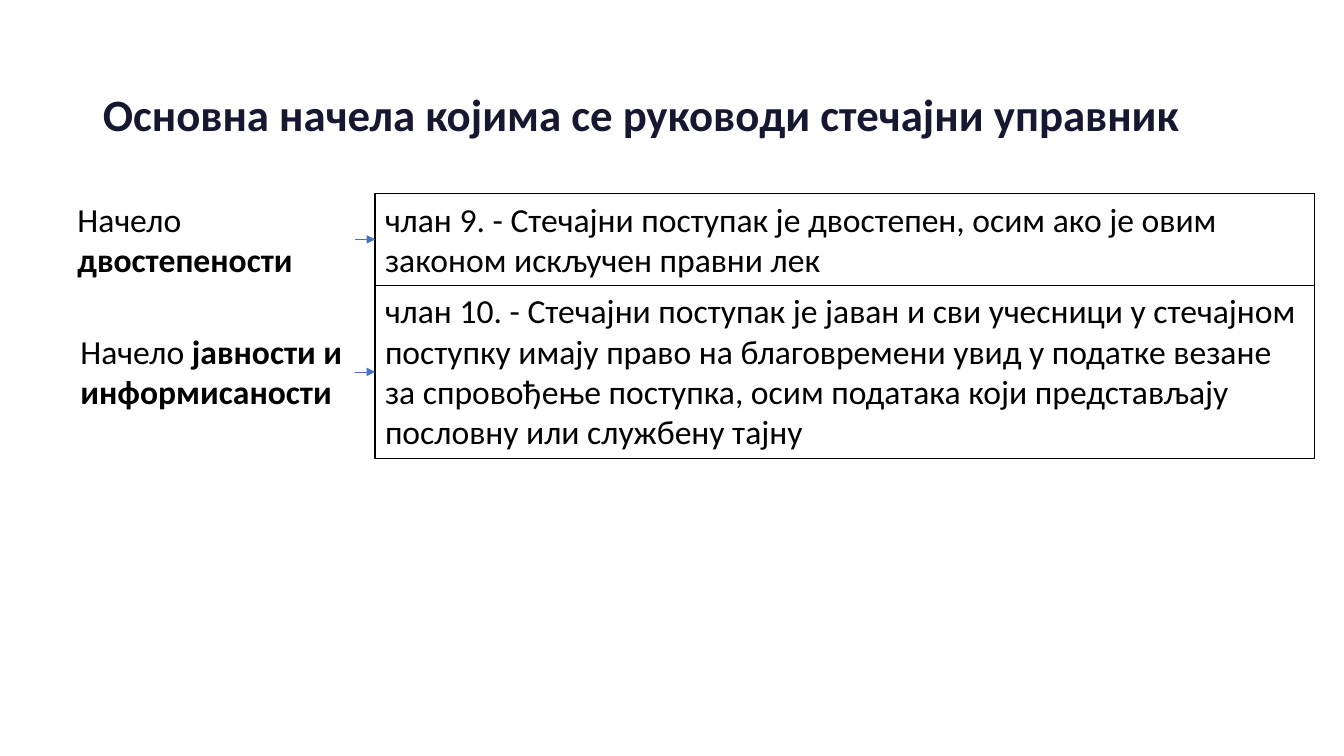
"""Builds a slide on the principles that guide a bankruptcy administrator."""
from dataclasses import dataclass

from lxml import etree
from pptx import Presentation
from pptx.dml.color import RGBColor
from pptx.enum.shapes import MSO_CONNECTOR, MSO_SHAPE
from pptx.enum.text import MSO_ANCHOR, MSO_AUTO_SIZE, PP_ALIGN
from pptx.oxml.ns import qn
from pptx.util import Inches, Pt

STRAIGHT = MSO_CONNECTOR.STRAIGHT
RECTANGLE = MSO_SHAPE.RECTANGLE
TOP, BOTTOM = MSO_ANCHOR.TOP, MSO_ANCHOR.BOTTOM
GROW = MSO_AUTO_SIZE.SHAPE_TO_FIT_TEXT
LEFT = PP_ALIGN.LEFT

FONT = "Calibri"
BLACK, NAVY, BLUE = "000000", "161730", "4472C4"
WIDTH, HEIGHT = Inches(13.33), Inches(7.5)
TITLE_ONLY = 5
LEFT_SIDE, RIGHT_SIDE = 1, 3

LABEL_RIGHT, LABEL_HEIGHT = 26.45, 12.13
BOX_LEFT, BOX_WIDTH = 27.91, 69.92
FIRST_TOP = 25.6


@dataclass
class Principle:
    """One principle: its label, its article and their shares of the slide in percent."""
    name: str
    article: str
    label_left: float
    box_height: float


PRINCIPLES = [
    Principle("двостепености",
              "члан 9. - Стечајни поступак је двостепен, осим ако је овим "
              "законом искључен правни лек", 5.03, 12.13),
    Principle("јавности и информисаности",
              "члан 10. - Стечајни поступак је јаван и сви учесници у стечајном "
              "поступку имају право на благовремени увид у податке везане за "
              "спровођење поступка, осим података који представљају пословну "
              "или службену тајну", 5.25, 22.93),
]


def color(value: str) -> RGBColor:
    """Turn a hex string into a colour."""
    return RGBColor.from_string(value)


def across(share: float) -> int:
    """Turn a percentage of the slide width into a length."""
    return round(WIDTH * share / 100)


def down(share: float) -> int:
    """Turn a percentage of the slide height into a length."""
    return round(HEIGHT * share / 100)


def area(x: float, y: float, w: float, h: float) -> tuple[int, int, int, int]:
    """Turn percentages into left, top, width and height."""
    return across(x), down(y), across(w), down(h)


def write(sp, runs: list[tuple[str, bool]], size: int = 24,
          ink: str = BLACK, anchor=TOP) -> None:
    """Fill a shape with one left-aligned paragraph of (text, bold) runs."""
    tf = sp.text_frame
    tf.word_wrap = True
    tf.auto_size = GROW
    tf.vertical_anchor = anchor
    p = tf.paragraphs[0]
    p.alignment = LEFT
    for text, bold in runs:
        r = p.add_run()
        r.text = text
        r.font.name = FONT
        r.font.size = Pt(size)
        r.font.bold = bold
        r.font.color.rgb = color(ink)


def add_title(s, text: str) -> None:
    """Place and format the title."""
    sp = s.shapes.title
    sp.left, sp.top, sp.width, sp.height = area(6.9, 11.47, 86.27, 7.87)
    write(sp, [(text, True)], 32, NAVY, BOTTOM)
    sp.text_frame.paragraphs[0].line_spacing = 0.9


def add_arrow(s, label, box) -> None:
    """Join a label to its box with a thin arrow."""
    cxn = s.shapes.add_connector(STRAIGHT, 0, 0, 0, 0)
    cxn.begin_connect(label, RIGHT_SIDE)
    cxn.end_connect(box, LEFT_SIDE)
    cxn.line.color.rgb = color(BLUE)
    cxn.line.width = Pt(0.5)
    etree.SubElement(cxn.line._get_or_add_ln(), qn("a:tailEnd"), type="triangle")
    etree.SubElement(cxn._element.spPr, qn("a:effectLst"))


def add_principle(s, item: Principle, top: float) -> None:
    """Draw a label, its framed article and the arrow between them."""
    label_top = top + (item.box_height - LABEL_HEIGHT) / 2
    label = s.shapes.add_textbox(*area(
        item.label_left, label_top, LABEL_RIGHT - item.label_left, LABEL_HEIGHT))
    write(label, [("Начело ", False), (item.name, True)])

    box = s.shapes.add_shape(RECTANGLE, *area(BOX_LEFT, top, BOX_WIDTH, item.box_height))
    box.shadow.inherit = False
    box.fill.background()
    box.line.color.rgb = color(BLACK)
    box.line.width = Pt(1)
    write(box, [(item.article, False)])
    add_arrow(s, label, box)


def main() -> None:
    """Build and save the slide."""
    prs = Presentation()
    prs.slide_width, prs.slide_height = WIDTH, HEIGHT
    s = prs.slides.add_slide(prs.slide_layouts[TITLE_ONLY])
    add_title(s, "Основна начела којима се руководи стечајни управник")
    top = FIRST_TOP
    for item in PRINCIPLES:
        add_principle(s, item, top)
        top += item.box_height
    prs.save("out.pptx")


if __name__ == "__main__":
    main()
